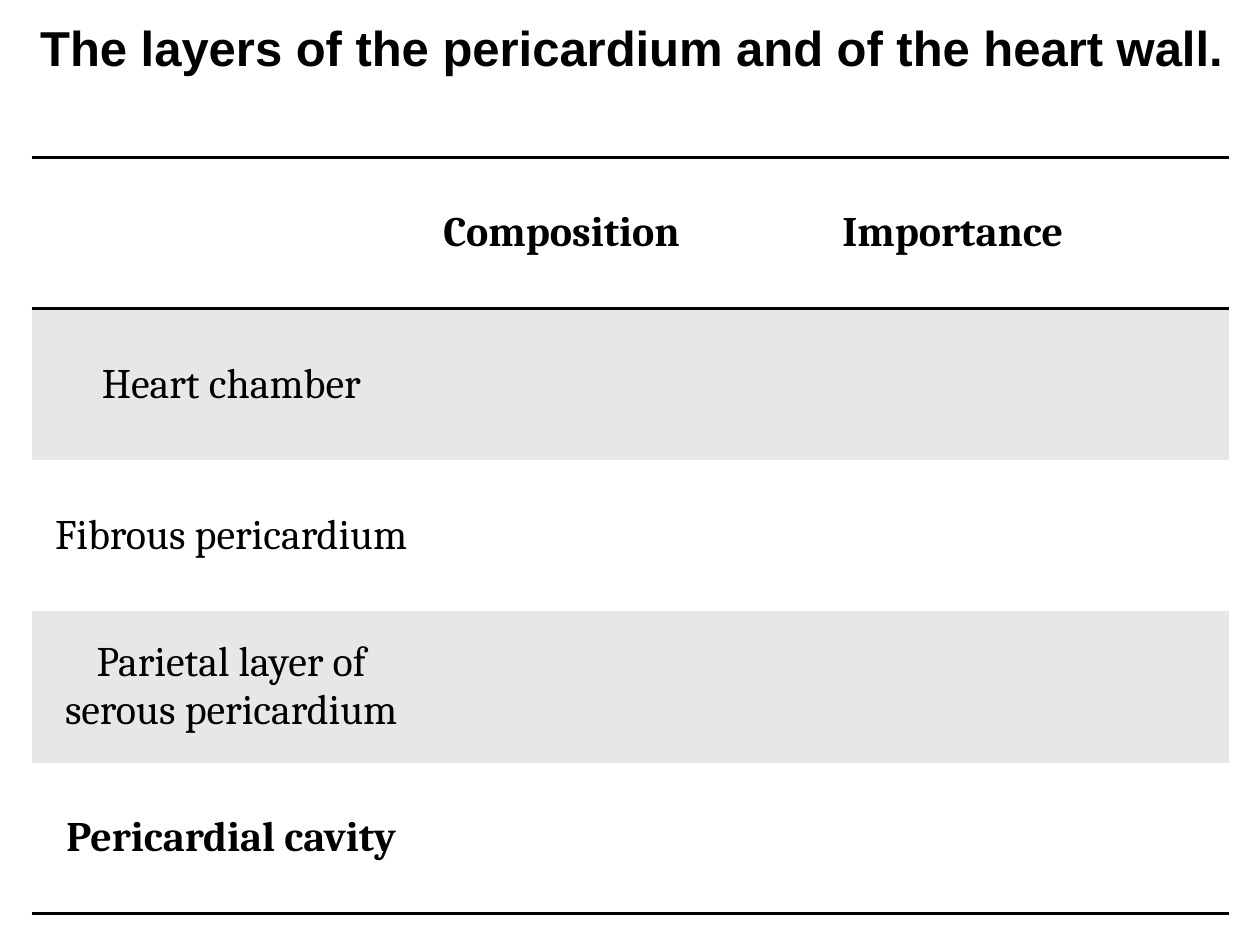
"""Build a slide with a table of the layers of the pericardium and heart wall."""
from lxml import etree
from pptx import Presentation
from pptx import util as u
from pptx.dml.color import RGBColor
from pptx.enum import text
from pptx.oxml import ns

HEADINGS = ["", "Composition", "Importance"]
LAYERS = [
    "Heart chamber",
    "Fibrous pericardium",
    "Parietal layer of serous pericardium",
    "Pericardial cavity",
]
PLAIN_STYLE = "{2D5ABB26-0587-4C30-8999-92F81FD0307C}"


def colour(value):
    return RGBColor.from_string(value)


class LayerSlide:
    ink, paper, band = "000000", "FFFFFF", "E7E7E7"
    title_font, body_font = "Arial", "Cambria"

    def __init__(self, deck):
        self.page = deck.slides.add_slide(deck.slide_layouts[5])

    def set_words(self, frame, words, font, size, bold, align):
        frame.text = words
        para = frame.paragraphs[0]
        para.alignment = align
        for span in para.runs:
            span.font.name = font
            span.font.size = u.Pt(size)
            span.font.bold = bold
            span.font.color.rgb = colour(self.ink)

    def title(self, words):
        box = self.page.shapes.title
        box.left, box.top, box.width, box.height = u.Cm(0), u.Cm(0), u.Cm(25.4), u.Cm(1.63)
        box.fill.solid()
        box.fill.fore_color.rgb = colour(self.paper)
        frame = box.text_frame
        frame.auto_size = text.MSO_AUTO_SIZE.NONE
        frame.vertical_anchor = text.MSO_ANCHOR.TOP
        frame.margin_left, frame.margin_top = u.Cm(0.81), u.Cm(0.36)
        frame.margin_right, frame.margin_bottom = u.Cm(0.25), u.Cm(0.13)
        self.set_words(frame, words, self.title_font, 28, True, text.PP_ALIGN.LEFT)

    def rule(self, cell, sides):
        properties = cell._tc.get_or_add_tcPr()
        for position, side in enumerate(sides):
            line = etree.Element(ns.qn(f"a:ln{side}"), w=str(u.Pt(2)))
            fill = etree.SubElement(line, ns.qn("a:solidFill"))
            etree.SubElement(fill, ns.qn("a:srgbClr"), val=self.ink)
            properties.insert(position, line)

    def table(self, rows):
        frame = self.page.shapes.add_table(
            len(rows), len(rows[0]), u.Cm(0.64), u.Cm(3.18), u.Cm(24.13), u.Cm(15.24))
        grid = frame.table
        grid.first_row = grid.horz_banding = False
        grid._tbl.tblPr.find(ns.qn("a:tableStyleId")).text = PLAIN_STYLE
        last = len(rows) - 1
        for i, row in enumerate(rows):
            align = text.PP_ALIGN.CENTER if i else text.PP_ALIGN.LEFT
            sides = {0: "TB", last: "B"}.get(i, "")
            for j, words in enumerate(row):
                cell = grid.cell(i, j)
                cell.fill.solid()
                cell.fill.fore_color.rgb = colour(self.band if i % 2 else self.paper)
                cell.vertical_anchor = text.MSO_ANCHOR.MIDDLE
                self.set_words(cell.text_frame, words, self.body_font, 24, i in (0, last), align)
                self.rule(cell, sides)


def main():
    deck = Presentation()
    deck.slide_width, deck.slide_height = u.Cm(25.4), u.Cm(19.05)
    slide = LayerSlide(deck)
    slide.table([HEADINGS] + [[layer, "", ""] for layer in LAYERS])
    slide.title("The layers of the pericardium and of the heart wall.")
    deck.save("out.pptx")


if __name__ == "__main__":
    main()
